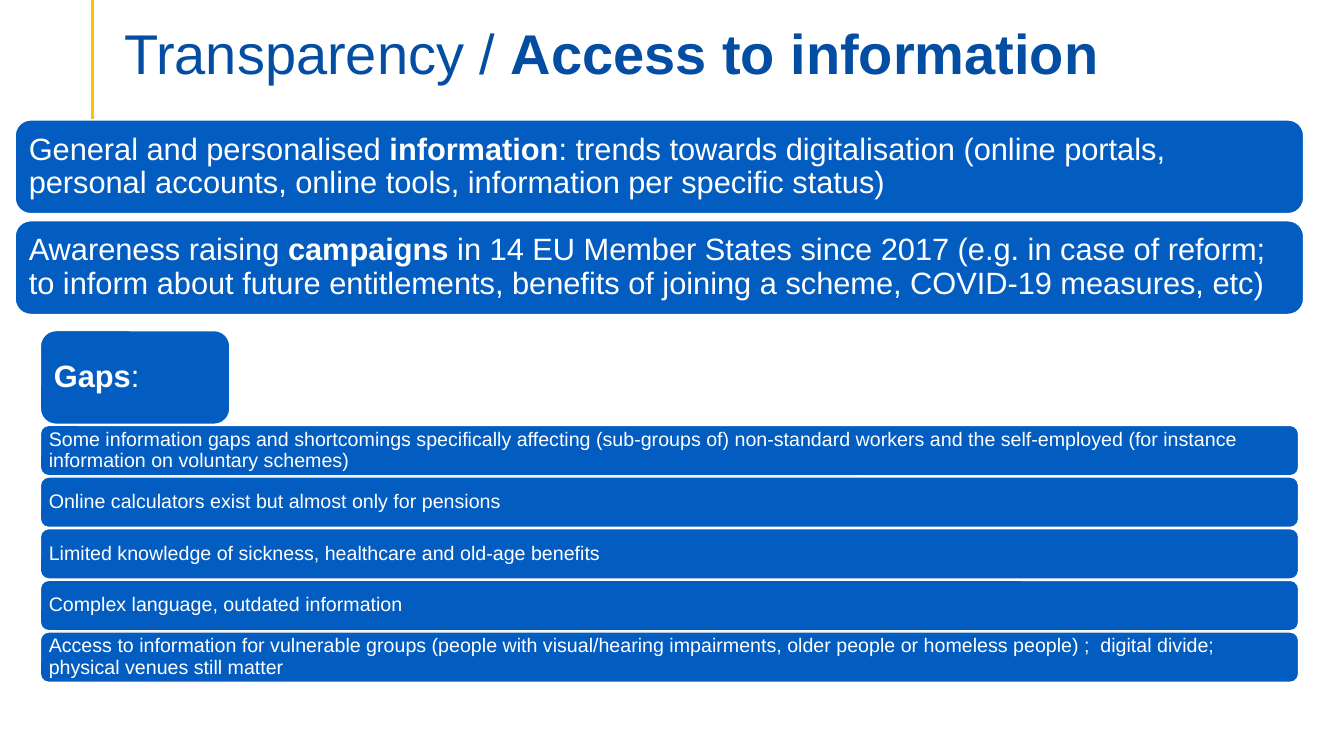
from dataclasses import dataclass

from lxml import etree
from pptx import Presentation
from pptx import util as u
from pptx.dml.color import RGBColor
from pptx.enum import shapes, text
from pptx.oxml import ns

WHITE = RGBColor(0xFF, 0xFF, 0xFF)
BLUE = RGBColor(0x03, 0x5D, 0xC1)
TITLE_BLUE = RGBColor(0x03, 0x4E, 0xA2)
GOLD = RGBColor(0xFF, 0xC0, 0x00)
FONT = "Arial"


@dataclass(frozen=True)
class Span:
    text: str
    bold: bool = False


@dataclass(frozen=True)
class Panel:
    left: float
    top: float
    width: float
    height: float
    size: int
    inset: float
    spans: tuple[Span, ...]


GAP_LEFT, GAP_TOP, GAP_STEP = 0.4, 4.22, 0.5125
GAPS = (
    "Some information gaps and shortcomings specifically affecting (sub-groups of) "
    "non-standard workers and the self-employed (for instance information on voluntary schemes)",
    "Online calculators exist but almost only for pensions",
    "Limited knowledge of sickness, healthcare and old-age benefits",
    "Complex language, outdated information",
    "Access to information for vulnerable groups (people with visual/hearing impairments, "
    "older people or homeless people) ;  digital divide; physical venues still matter",
)
HEADLINES = (
    Panel(0.15, 1.19, 12.78, 0.93, 22, 0.09, (
        Span("General and personalised "),
        Span("information", True),
        Span(": trends towards digitalisation (online portals, personal accounts, "
             "online tools, information per specific status)"),
    )),
    Panel(0.15, 2.19, 12.78, 0.93, 22, 0.09, (
        Span("Awareness raising "),
        Span("campaigns", True),
        Span(" in 14 EU Member States since 2017 (e.g. in case of reform; to inform about "
             "future entitlements, benefits of joining a scheme, COVID-19 measures, etc)"),
    )),
    Panel(GAP_LEFT, 3.28, 1.88, 0.93, 22, 0.09, (Span("Gaps", True), Span(":"))),
)
GAP_PANELS = tuple(
    Panel(GAP_LEFT, GAP_TOP + row * GAP_STEP, 12.48, 0.5, 14, 0.06, (Span(gap),))
    for row, gap in enumerate(GAPS)
)


def write_spans(frame, spans: tuple[Span, ...], size: int, color: RGBColor) -> None:
    para = frame.paragraphs[0]
    para.alignment = text.PP_ALIGN.LEFT
    para.line_spacing = 0.9
    for span in spans:
        run = para.add_run()
        run.text = span.text
        run.font.name = FONT
        run.font.size = u.Pt(size)
        run.font.bold = span.bold
        run.font.color.rgb = color


def set_frame(frame, anchor, left: float, top: float, right: float, bottom: float) -> None:
    frame.word_wrap = True
    frame.auto_size = text.MSO_AUTO_SIZE.NONE
    frame.vertical_anchor = anchor
    frame.margin_left, frame.margin_top = u.Inches(left), u.Inches(top)
    frame.margin_right, frame.margin_bottom = u.Inches(right), u.Inches(bottom)


def add_title(page) -> None:
    title = page.shapes.title
    title.left, title.top = u.Inches(1.13), u.Inches(0)
    title.width, title.height = u.Inches(11.5), u.Inches(0.86)
    set_frame(title.text_frame, text.MSO_ANCHOR.BOTTOM, 0.1, 0.05, 0.1, 0)
    spans = (Span("Transparency / "), Span("Access to information", True))
    write_spans(title.text_frame, spans, 40, TITLE_BLUE)


def add_accent_line(page) -> None:
    line = page.shapes.add_connector(
        shapes.MSO_CONNECTOR.STRAIGHT,
        u.Inches(0.92), u.Inches(0), u.Inches(0.92), u.Inches(1.4))
    line.line.color.rgb = GOLD
    line.line.width = u.Pt(2.25)
    etree.SubElement(line._element.spPr, ns.qn("a:effectLst"))


def add_panel(page, panel: Panel) -> None:
    box = page.shapes.add_shape(
        shapes.MSO_SHAPE.ROUNDED_RECTANGLE,
        u.Inches(panel.left), u.Inches(panel.top),
        u.Inches(panel.width), u.Inches(panel.height))
    box.shadow.inherit = False
    box.fill.solid()
    box.fill.fore_color.rgb = BLUE
    box.line.color.rgb = WHITE
    box.line.width = u.Pt(1)
    set_frame(box.text_frame, text.MSO_ANCHOR.MIDDLE, *(panel.inset,) * 4)
    write_spans(box.text_frame, panel.spans, panel.size, WHITE)


def main() -> None:
    deck = Presentation()
    deck.slide_width, deck.slide_height = u.Inches(13.33), u.Inches(7.5)
    page = deck.slides.add_slide(deck.slide_layouts.get_by_name("Title Only"))
    page.background.fill.solid()
    page.background.fill.fore_color.rgb = WHITE
    add_title(page)
    add_accent_line(page)
    for panel in HEADLINES + GAP_PANELS:
        add_panel(page, panel)
    deck.save("out.pptx")


if __name__ == "__main__":
    main()
